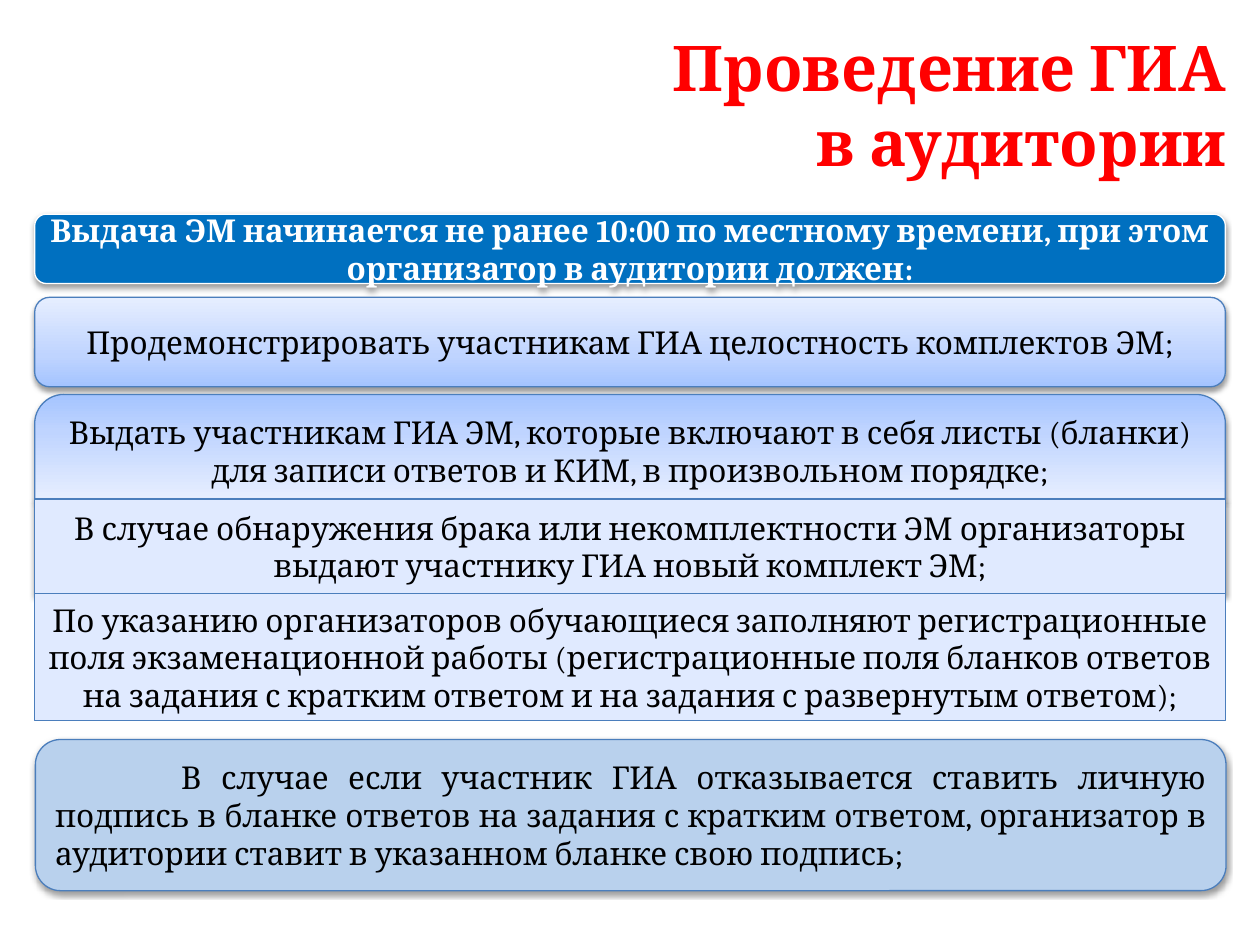
import pptx
import pptx.util
import pptx.oxml
import pptx.oxml.ns
from pptx.dml.color import RGBColor
from pptx.enum.shapes import MSO_SHAPE
from pptx.enum.text import MSO_ANCHOR, PP_ALIGN
from pptx.util import Pt

RED = RGBColor(0xFF, 0x00, 0x00)
BLACK = RGBColor(0x00, 0x00, 0x00)
WHITE = RGBColor(0xFF, 0xFF, 0xFF)
BANNER_BLUE = RGBColor(0x00, 0x70, 0xC0)
OUTLINE_BLUE = RGBColor(0x4B, 0x7E, 0xBC)
ROW_BLUE = RGBColor(0xE0, 0xEA, 0xFF)
NOTE_BLUE = RGBColor(0xB9, 0xD1, 0xED)
GRADIENT = [
    (0, RGBColor(0xA4, 0xC4, 0xFF)),
    (35, RGBColor(0xBF, 0xD4, 0xFF)),
    (100, RGBColor(0xE6, 0xEE, 0xFF)),
]
FONT = "Cambria"
NAMESPACE = pptx.oxml.ns.nsdecls("a")
LEFT, WIDTH = 19.8, 680.4


def write_text(shape, text, size, color, align, bold=False):
    frame = shape.text_frame
    frame.word_wrap = True
    frame.vertical_anchor = MSO_ANCHOR.MIDDLE
    frame.text = text
    for para in frame.paragraphs:
        para.alignment = align
        for span in para.runs:
            span.font.name = FONT
            span.font.size = Pt(size)
            span.font.bold = bold
            span.font.color.rgb = color


def add_soft_shadow(shape):
    shape._element.spPr.append(pptx.oxml.parse_xml(
        f'<a:effectLst {NAMESPACE}>'
        f'<a:outerShdw blurRad="{Pt(3.1)}" dist="{Pt(1.6)}" dir="5400000" rotWithShape="0">'
        '<a:srgbClr val="000000"><a:alpha val="38000"/></a:srgbClr>'
        '</a:outerShdw></a:effectLst>'))


def fill_gradient(shape, angle):
    """Fill along the clockwise angle, in degrees, from dark to light."""
    stops = "".join(
        f'<a:gs pos="{position * 1000}"><a:srgbClr val="{color}"/></a:gs>'
        for position, color in GRADIENT)
    geometry = shape._element.spPr.find(pptx.oxml.ns.qn("a:prstGeom"))
    geometry.addnext(pptx.oxml.parse_xml(
        f'<a:gradFill {NAMESPACE} rotWithShape="1"><a:gsLst>{stops}</a:gsLst>'
        f'<a:lin ang="{angle * 60000}" scaled="0"/></a:gradFill>'))


def add_panel(page, box, text, fill=None, angle=None, line=OUTLINE_BLUE,
              color=BLACK, bold=False, align=PP_ALIGN.CENTER,
              kind=MSO_SHAPE.ROUNDED_RECTANGLE, corner=None, shadow=True):
    """Add a text panel with a solid fill, or a gradient at the given angle."""
    panel = page.shapes.add_shape(kind, *map(Pt, box))
    if corner is not None:
        panel.adjustments[0] = corner
    panel.line.color.rgb = line
    panel.line.width = Pt(0.75)
    if fill is None:
        fill_gradient(panel, angle)
    else:
        panel.fill.solid()
        panel.fill.fore_color.rgb = fill
    if shadow:
        add_soft_shadow(panel)
    else:
        panel.shadow.inherit = False
    write_text(panel, text, 18, color, align, bold)
    return panel


def add_title(page, box):
    title = page.shapes.add_textbox(*map(Pt, box))
    write_text(title, "Проведение ГИА\nв аудитории", 36, RED, PP_ALIGN.RIGHT, bold=True)


def add_note(page, box):
    note = add_panel(
        page, box,
        "В случае если участник ГИА отказывается ставить личную подпись в бланке "
        "ответов на задания с кратким ответом, организатор в аудитории ставит в "
        "указанном бланке свою подпись;",
        fill=NOTE_BLUE, align=PP_ALIGN.JUSTIFY)
    properties = note.text_frame.paragraphs[0]._p.get_or_add_pPr()
    properties.set("indent", str(Pt(72)))


def add_step_stack(page, left, top, width):
    """Stack the joined steps downwards; only the first has round corners."""
    steps = [
        (59.8, "Выдать участникам ГИА ЭМ, которые включают в себя листы (бланки) "
               "для записи ответов и КИМ, в произвольном порядке;",
         dict(angle=90, corner=0.28)),
        (54, "В случае обнаружения брака или некомплектности ЭМ организаторы "
             "выдают участнику ГИА новый комплект ЭМ;",
         dict(fill=ROW_BLUE, corner=0)),
        (72.7, "По указанию организаторов обучающиеся заполняют регистрационные "
               "поля экзаменационной работы (регистрационные поля бланков ответов "
               "на задания с кратким ответом и на задания с развернутым ответом);",
         dict(fill=ROW_BLUE, corner=0, shadow=False)),
    ]
    for height, text, style in steps:
        add_panel(page, (left, top, width, height), text,
                  kind=MSO_SHAPE.ROUND_2_SAME_RECTANGLE, **style)
        top += height


def main():
    deck = pptx.Presentation()
    deck.slide_width, deck.slide_height = Pt(720), Pt(540)
    page = deck.slides.add_slide(deck.slide_layouts[6])
    add_note(page, (20.2, 422.6, WIDTH, 86.4))
    add_title(page, (82.1, 14.4, 625.7, 90))
    add_panel(page, (LEFT, 122.4, WIDTH, 39.6),
              "Выдача ЭМ начинается не ранее 10:00 по местному времени, "
              "при этом организатор в аудитории должен:",
              fill=BANNER_BLUE, line=WHITE, color=WHITE, bold=True)
    add_panel(page, (LEFT, 169.9, WIDTH, 51.1),
              "Продемонстрировать участникам ГИА целостность комплектов ЭМ;",
              angle=270)
    add_step_stack(page, LEFT, 225.4, WIDTH)
    deck.save("out.pptx")


if __name__ == "__main__":
    main()
